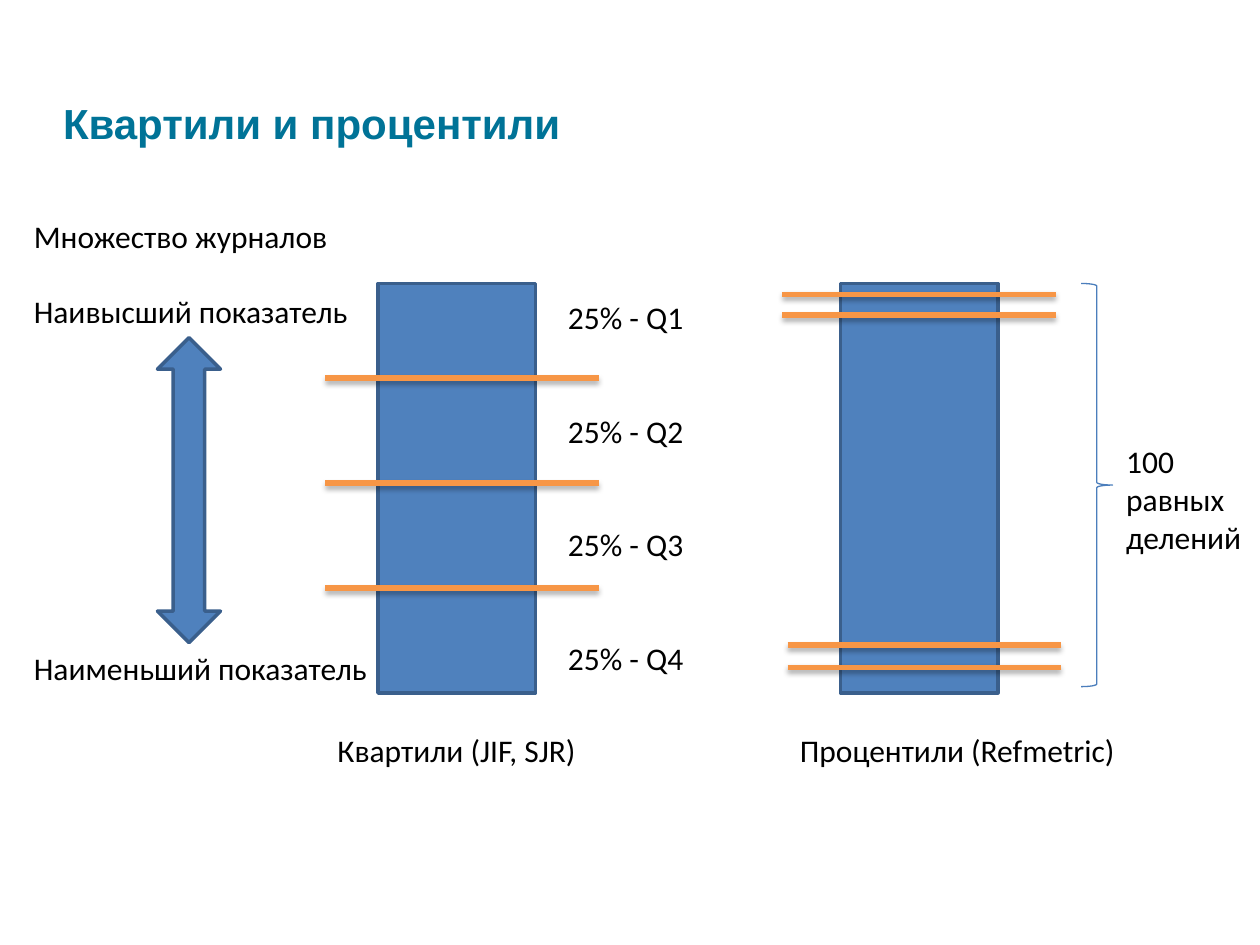
from dataclasses import dataclass

from lxml import etree
from pptx import Presentation
from pptx.dml.color import RGBColor
from pptx.enum.shapes import MSO_CONNECTOR, MSO_SHAPE
from pptx.enum.text import MSO_ANCHOR, PP_ALIGN
from pptx.oxml import parse_xml
from pptx.oxml.ns import nsdecls, qn
from pptx.util import Inches, Pt

RECTANGLE = MSO_SHAPE.RECTANGLE
DOUBLE_ARROW = MSO_SHAPE.UP_DOWN_ARROW
BRACE = MSO_SHAPE.RIGHT_BRACE
STRAIGHT = MSO_CONNECTOR.STRAIGHT
LEFT = PP_ALIGN.LEFT
MIDDLE = MSO_ANCHOR.MIDDLE

BLUE, DARK_BLUE, BRACE_BLUE = "4F81BD", "3A5F8C", "4B7EBC"
ORANGE, TEAL, BLACK = "F79646", "007397", "000000"

TITLE_FORMAT = {"name": "Arial", "size": Pt(24), "bold": True}
LABEL_FORMAT = {"name": "Calibri", "size": Pt(18), "bold": False}

DIVIDER_WIDTH = 2.17
BAR_TOP, BAR_WIDTH, BAR_HEIGHT = 2.25, 1.25, 3.25

SHADOW = (
    f'<a:effectLst {nsdecls("a")}>'
    '<a:outerShdw blurRad="39370" dist="22860" dir="5400000" rotWithShape="0">'
    '<a:srgbClr val="000000"><a:alpha val="35000"/></a:srgbClr>'
    '</a:outerShdw></a:effectLst>'
)


@dataclass
class Label:
    left: float
    top: float
    width: float
    height: float
    lines: list[str]
    gap: float = 0  # points before each line after the first


@dataclass
class Block:
    kind: int
    left: float
    top: float
    width: float
    height: float
    fill: str | None = BLUE
    line: str = DARK_BLUE
    weight: float = 2


@dataclass
class Divider:
    left: float
    top: float


BLOCKS = [
    Block(RECTANGLE, 3, BAR_TOP, BAR_WIDTH, BAR_HEIGHT),
    Block(RECTANGLE, 6.67, BAR_TOP, BAR_WIDTH, BAR_HEIGHT),
    Block(DOUBLE_ARROW, 1.25, 2.68, 0.5, 2.42),
    Block(BRACE, 8.58, BAR_TOP, 0.25, 3.2, None, BRACE_BLUE, 0.75),
]

QUARTILE_DIVIDERS = [Divider(2.58, 3 + step * 2.5 / 3) for step in range(3)]
PERCENTILE_DIVIDERS = [
    Divider(6.21, 2.34), Divider(6.21, 2.5),
    Divider(6.25, 5.12), Divider(6.25, 5.3),
]

LABELS = [
    Label(0.17, 1.67, 2.96, 1.01,
          ["Множество журналов", "Наивысший показатель"], 21.7),
    Label(0.17, 5.1, 2.99, 0.4, ["Наименьший показатель"]),
    Label(4.41, 2.32, 1.17, 3.13,
          [f"25% - Q{number}" for number in range(1, 5)], 43.2),
    Label(2.58, 5.75, 2.99, 0.4, ["Квартили (JIF, SJR)"]),
    Label(6.25, 5.75, 2.99, 0.4, ["Процентили (Refmetric)"]),
    Label(8.84, 3.46, 1.16, 1.01, ["100", "равных делений"]),
]


def color(value: str) -> RGBColor:
    return RGBColor.from_string(value)


def format_font(font, values: dict, font_color: str) -> None:
    for name, value in values.items():
        setattr(font, name, value)
    font.color.rgb = color(font_color)


def write_title(slide, text: str) -> None:
    title = slide.shapes.title
    title.left, title.top = Inches(0.5), Inches(0.77)
    title.width, title.height = Inches(9.01), Inches(0.4)
    frame = title.text_frame
    frame.text = text
    frame.vertical_anchor = MIDDLE
    for side in ("left", "top", "right", "bottom"):
        setattr(frame, f"margin_{side}", 0)
    paragraph = frame.paragraphs[0]
    paragraph.alignment = LEFT
    format_font(paragraph.runs[0].font, TITLE_FORMAT, TEAL)


def draw_block(slide, block: Block) -> None:
    shape = slide.shapes.add_shape(
        block.kind, Inches(block.left), Inches(block.top),
        Inches(block.width), Inches(block.height))
    shape.shadow.inherit = False
    if block.fill:
        shape.fill.solid()
        shape.fill.fore_color.rgb = color(block.fill)
    else:
        shape.fill.background()
    shape.line.color.rgb = color(block.line)
    shape.line.width = Pt(block.weight)


def draw_divider(slide, divider: Divider) -> None:
    top = Inches(divider.top)
    connector = slide.shapes.add_connector(
        STRAIGHT, Inches(divider.left), top,
        Inches(divider.left + DIVIDER_WIDTH), top)
    connector.line.color.rgb = color(ORANGE)
    connector.line.width = Pt(3)
    properties: etree._Element = connector._element.find(qn("p:spPr"))
    properties.append(parse_xml(SHADOW))


def write_label(slide, label: Label) -> None:
    box = slide.shapes.add_textbox(
        Inches(label.left), Inches(label.top),
        Inches(label.width), Inches(label.height))
    frame = box.text_frame
    frame.word_wrap = True
    for index, line in enumerate(label.lines):
        paragraph = frame.add_paragraph() if index else frame.paragraphs[0]
        if index:
            paragraph.space_before = Pt(label.gap)
        run = paragraph.add_run()
        run.text = line
        format_font(run.font, LABEL_FORMAT, BLACK)


def main() -> None:
    presentation = Presentation()
    presentation.slide_width = Inches(10)
    presentation.slide_height = Inches(7.5)
    slide = presentation.slides.add_slide(presentation.slide_layouts[5])

    write_title(slide, "Квартили и процентили")

    # Bars, scale arrow and brace
    for block in BLOCKS:
        draw_block(slide, block)

    # Cuts across the two bars
    for divider in QUARTILE_DIVIDERS + PERCENTILE_DIVIDERS:
        draw_divider(slide, divider)

    # Captions
    for label in LABELS:
        write_label(slide, label)

    presentation.save("out.pptx")


if __name__ == "__main__":
    main()
